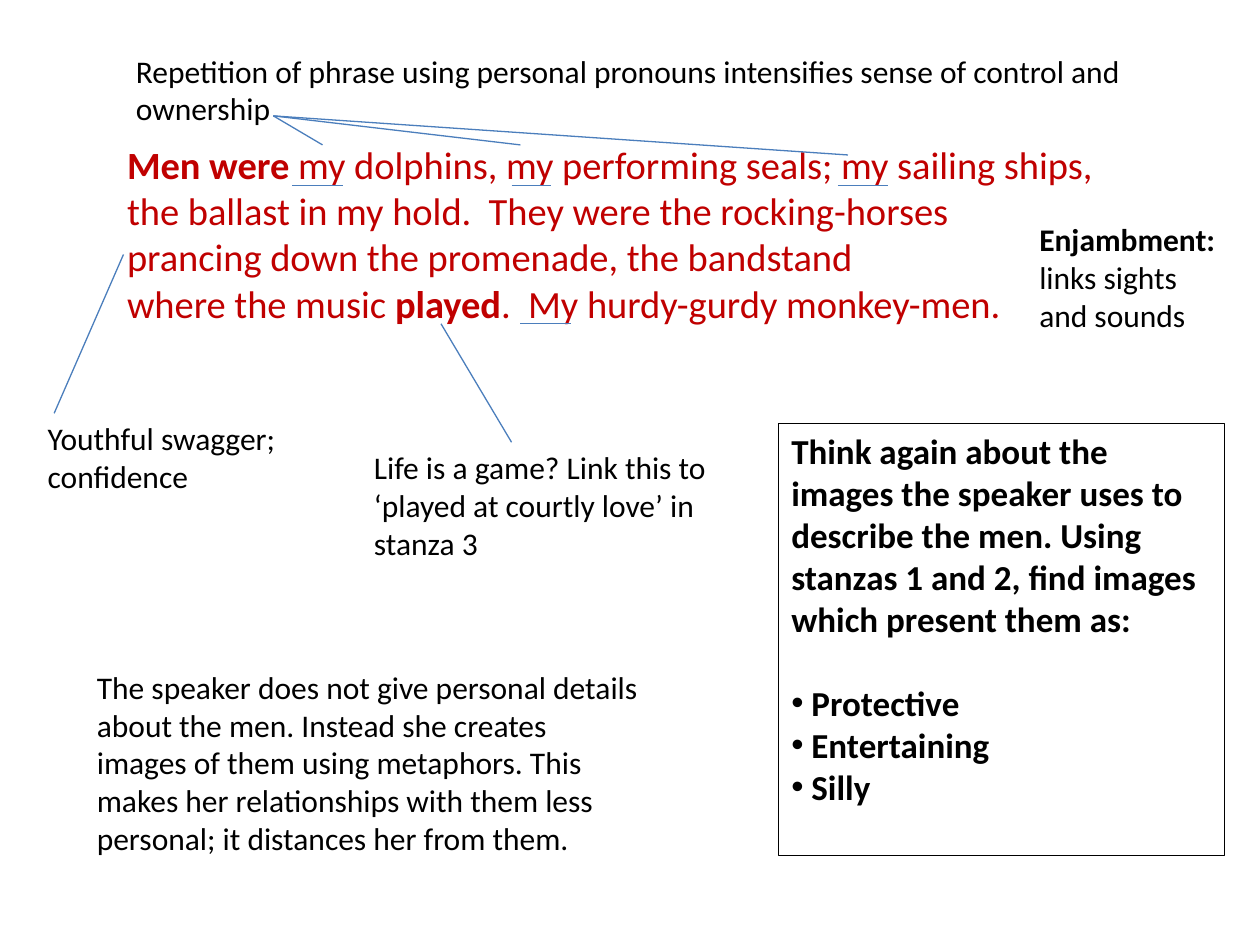
from lxml.etree import SubElement
from pptx import Presentation
from pptx.dml.color import RGBColor
from pptx.enum.shapes import MSO_CONNECTOR
from pptx.enum.text import MSO_ANCHOR, MSO_AUTO_SIZE
from pptx.oxml.ns import qn
from pptx.util import Inches, Pt

BLACK = RGBColor(0x00, 0x00, 0x00)
RED = RGBColor(0xC0, 0x00, 0x00)
BLUE = RGBColor(0x4B, 0x7E, 0xBC)
FONT = "Calibri"

POEM = [
    [("Men were ", True), ("my dolphins, my performing seals; my sailing ships,", False)],
    [("the ballast in my hold.  They were the rocking-horses", False)],
    [("prancing down the promenade, the bandstand", False)],
    [("where the music ", False), ("played", True), (".  My hurdy-gurdy monkey-men.", False)],
]
NOTES = [
    ((0.28, 3.28, 2.13, 0.71), [("Youthful swagger; confidence", False)]),
    ((2.87, 3.51, 3.23, 1.01),
     [("Life is a game? Link this to ‘played at courtly love’ in stanza 3", False)]),
    ((0.67, 5.25, 4.49, 1.62),
     [("The speaker does not give personal details about the men. Instead she "
       "creates images of them using metaphors. This makes her relationships "
       "with them less personal; it distances her from them.", False)]),
    ((0.98, 0.36, 8.19, 0.71),
     [("Repetition of phrase using personal pronouns intensifies sense of "
       "control and ownership", False)]),
    ((8.15, 1.7, 1.73, 1.01), [("Enjambment: ", True), ("links sights and sounds", False)]),
]
PROMPT = ("Think again about the images the speaker uses to describe the men. "
          "Using stanzas 1 and 2, find images which present them as:")
THEMES = ["Protective", "Entertaining", "Silly"]
UNDERLINES = [(2.32, 2.72, 1.47), (4.06, 4.37, 1.47), (6.65, 7.05, 1.47), (4.13, 4.53, 2.57)]
HUB = (2.17, 0.92)
TARGETS = [(2.56, 1.15), (4.13, 1.15), (6.73, 1.23)]
LEADERS = [((0.98, 2.02), (0.43, 3.28)), ((3.5, 2.57), (4.06, 3.51))]


def style(font, size, color, bold):
    """Set the face, size, colour and weight of a font."""
    font.name, font.size, font.bold = FONT, Pt(size), bold
    font.color.rgb = color


def add_text(slide, box, lines, size=18, color=BLACK):
    """Add a wrapped text box with one paragraph per line of runs."""
    frame = slide.shapes.add_textbox(*map(Inches, box)).text_frame
    frame.word_wrap = True
    frame.auto_size = MSO_AUTO_SIZE.SHAPE_TO_FIT_TEXT
    for i, line in enumerate(lines):
        para = frame.add_paragraph() if i else frame.paragraphs[0]
        for text, bold in line:
            run = para.add_run()
            run.text = text
            style(run.font, size, color, bold)


def add_line(slide, start, end):
    """Draw a thin blue line without a shadow."""
    line = slide.shapes.add_connector(MSO_CONNECTOR.STRAIGHT, *map(Inches, start + end))
    line.line.color.rgb = BLUE
    line.line.width = Pt(0.75)
    SubElement(line._element.spPr, qn("a:effectLst"))


def set_bullet(para, indent):
    """Give a paragraph a hanging bullet, or none when the indent is zero."""
    props = para._p.get_or_add_pPr()
    props.set("marL", str(Inches(indent)))
    props.set("indent", str(-Inches(indent)))
    if indent:
        SubElement(props, qn("a:buFont"), typeface="Arial")
        SubElement(props, qn("a:buChar"), char="•")
    else:
        SubElement(props, qn("a:buNone"))


def fill_task(body):
    """Turn the body placeholder into the outlined task box."""
    body.left, body.top, body.width, body.height = map(Inches, (6.18, 3.36, 3.54, 3.43))
    body.line.color.rgb = BLACK
    body.line.width = Pt(0.75)
    frame = body.text_frame
    frame.text = "\n".join([PROMPT] + THEMES)
    frame.auto_size = MSO_AUTO_SIZE.NONE
    frame.vertical_anchor = MSO_ANCHOR.TOP
    for i, para in enumerate(frame.paragraphs):
        para.space_before = Pt(24 if i == 1 else 0)
        set_bullet(para, 0.16 if i else 0)
        style(para.runs[0].font, 20, BLACK, True)


def main():
    """Build the annotated stanza slide."""
    deck = Presentation()
    deck.slide_width, deck.slide_height = Inches(10), Inches(7.5)
    slide = deck.slides.add_slide(deck.slide_layouts[1])
    title = slide.shapes.title.element
    title.getparent().remove(title)
    fill_task(slide.placeholders[1])
    add_text(slide, (0.91, 1.07, 8.11, 1.58), POEM, 22, RED)
    for box, line in NOTES:
        add_text(slide, box, [line])
    for left, right, y in UNDERLINES:
        add_line(slide, (left, y), (right, y))
    for start, end in LEADERS:
        add_line(slide, start, end)
    for point in TARGETS:
        add_line(slide, point, HUB)
    deck.save("out.pptx")


if __name__ == "__main__":
    main()
